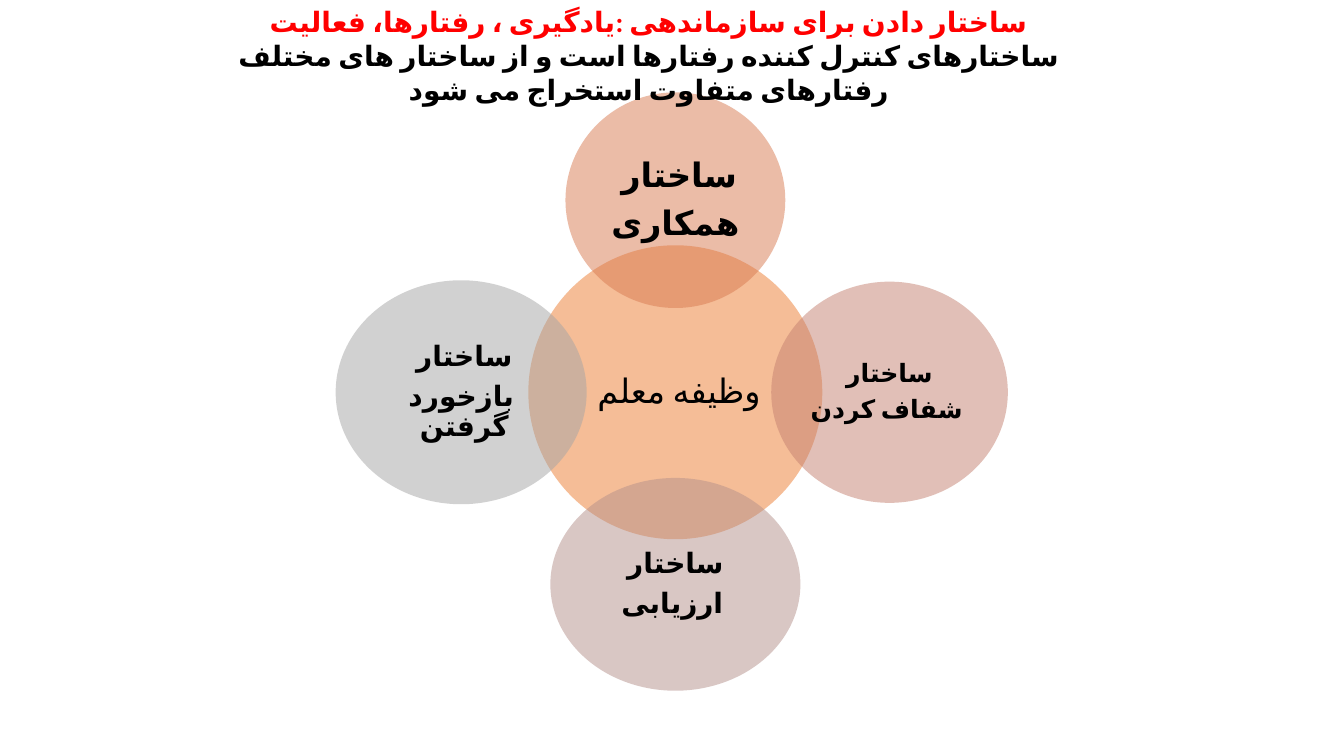
"""Build a slide of four structures overlapping the teacher's task circle."""
from lxml import etree
from pptx import Presentation
from pptx.dml.color import RGBColor
from pptx.enum.lang import MSO_LANGUAGE_ID
from pptx.enum.shapes import MSO_SHAPE
from pptx.enum.text import MSO_ANCHOR, MSO_AUTO_SIZE, PP_ALIGN
from pptx.oxml.ns import qn
from pptx.util import Pt

OVAL = MSO_SHAPE.OVAL
MIDDLE = MSO_ANCHOR.MIDDLE
GROW = MSO_AUTO_SIZE.SHAPE_TO_FIT_TEXT
CENTER = PP_ALIGN.CENTER
FARSI = MSO_LANGUAGE_ID.FARSI
FONT = "Calibri"
COLORS = {
    "task": "ED7D31", "cooperation": "D87A51", "clarity": "C48170",
    "assessment": "B4908B", "feedback": "A5A5A5",
    "text": "000000", "heading": "FF0000",
}
CENTER_X, CENTER_Y = 482.4, 280.2
STEP_X, STEP_Y = 153, 137.2


def write_line(p, text, size, bold, color="text"):
    p.alignment = CENTER
    pPr = p._p.get_or_add_pPr()
    pPr.set("rtl", "1")
    p.font.name = FONT
    p.font.size = Pt(size)
    p.font.bold = bold
    p.font.color.rgb = RGBColor.from_string(COLORS[color])
    etree.SubElement(pPr.find(qn("a:defRPr")), qn("a:cs")).set("typeface", FONT)
    r = p.add_run()
    r.text = text
    r.font.language_id = FARSI


prs = Presentation()
prs.slide_width, prs.slide_height = Pt(960), Pt(540)
s = prs.slides.add_slide(prs.slide_layouts[6])

circles = [
    ("task", 0, 0, 210, 210, 24, False, ["وظیفه معلم "]),
    ("cooperation", 0, -1, 157, 154, 24, True, ["ساختار ", "همکاری"]),
    ("clarity", 1, 0, 169, 158, 18, True, ["ساختار", " شفاف کردن "]),
    ("assessment", 0, 1, 178.6, 152, 20, True, ["ساختار", " ارزیابی"]),
    ("feedback", -1, 0, 179.3, 160, 20, True, ["ساختار ", "بازخورد گرفتن "]),
]
for name, dx, dy, w, h, size, bold, lines in circles:
    left = CENTER_X + dx * STEP_X - w / 2
    top = CENTER_Y + dy * STEP_Y - h / 2
    sp = s.shapes.add_shape(OVAL, Pt(left), Pt(top), Pt(w), Pt(h))
    sp.shadow.inherit = False
    sp.line.fill.background()
    sp.fill.solid()
    sp.fill.fore_color.rgb = RGBColor.from_string(COLORS[name])
    fill_color = sp._element.spPr.find(qn("a:solidFill"))[0]
    etree.SubElement(fill_color, qn("a:alpha")).set("val", "50000")
    tf = sp.text_frame
    tf.word_wrap = True
    tf.vertical_anchor = MIDDLE
    tf.margin_left = tf.margin_right = tf.margin_top = tf.margin_bottom = Pt(2.4)
    for i, line in enumerate(lines):
        p = tf.add_paragraph() if i else tf.paragraphs[0]
        write_line(p, line, size, bold)
        p.line_spacing = 0.9
        p.space_after = Pt(0.35 * size)

tf = s.shapes.add_textbox(Pt(120.2), Pt(0), Pt(686.2), Pt(55.4)).text_frame
tf.word_wrap = True
tf.auto_size = GROW
write_line(tf.paragraphs[0], "ساختار دادن برای سازماندهی :یادگیری ، رفتارها، فعالیت", 20, True, "heading")
write_line(
    tf.add_paragraph(),
    "ساختارهای کنترل کننده رفتارها است و از ساختار های مختلف رفتارهای متفاوت استخراج می شود",
    20, True,
)

prs.save("out.pptx")
